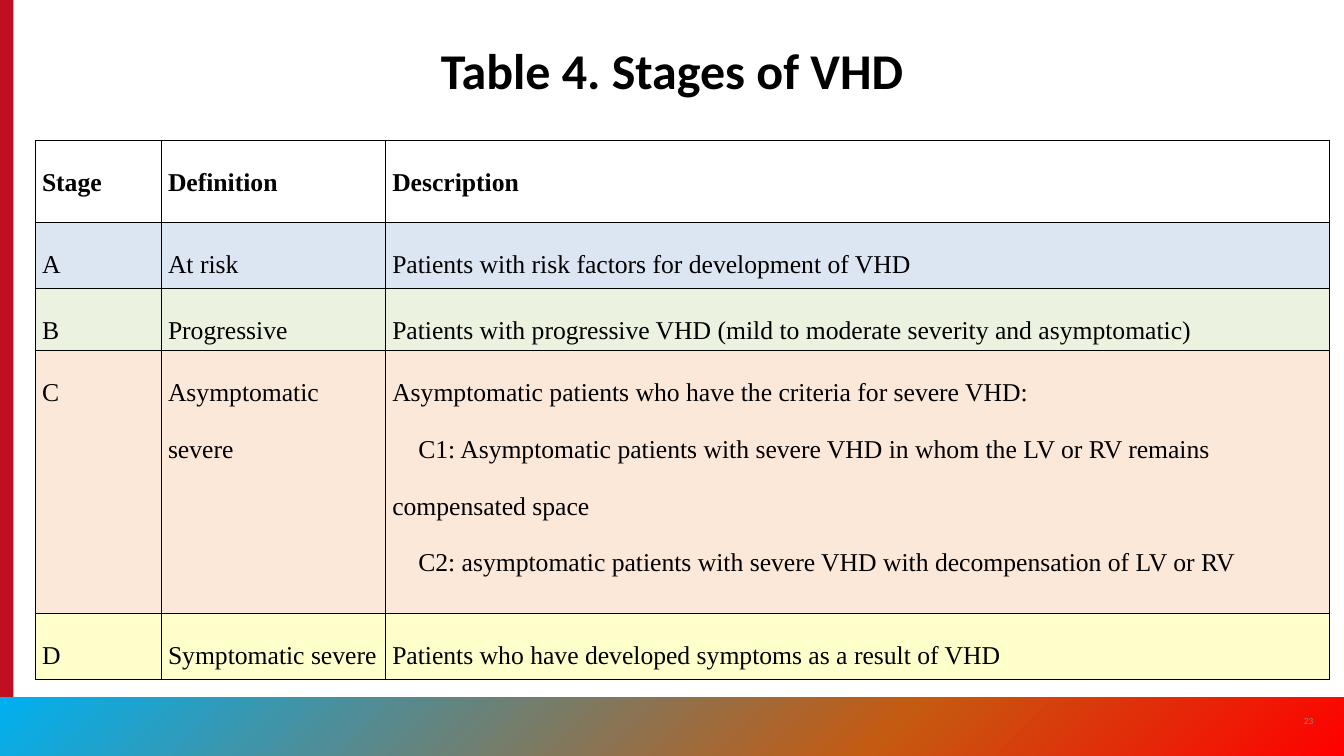
from copy import deepcopy

from lxml import etree
from pptx import Presentation
from pptx import util as u
from pptx.dml.color import RGBColor
from pptx.enum import shapes, text
from pptx.oxml.ns import qn

COLORS = {
    "black": "000000",
    "white": "FFFFFF",
    "stripe": "C10E21",
    "number": "8A8B8A",
    "at_risk": "DCE6F2",
    "progressive": "EBF2DF",
    "asymptomatic": "FCE8D9",
    "symptomatic": "FFFFCC",
}
FOOTER_STOPS = [(0, "00B0F0"), (0.66, "C55A11"), (1, "FF0000")]
COLUMN_WIDTHS = [1.5, 2.67, 11.24]
STAGES = [
    (0.98, "white", ["Stage"], ["Definition"], ["Description"]),
    (0.78, "at_risk", ["A"], ["At risk"],
     ["Patients with risk factors for development of VHD"]),
    (0.74, "progressive", ["B"], ["Progressive"],
     ["Patients with progressive VHD (mild to moderate severity and asymptomatic)"]),
    (3.13, "asymptomatic", ["C"], ["Asymptomatic severe"],
     ["Asymptomatic patients who have the criteria for severe VHD:",
      "C1: Asymptomatic patients with severe VHD in whom the LV or RV remains compensated space",
      "C2: asymptomatic patients with severe VHD with decompensation of LV or RV"]),
    (0.79, "symptomatic", ["D"], ["Symptomatic severe"],
     ["Patients who have developed symptoms as a result of VHD"]),
]


def rgb(name):
    return RGBColor.from_string(COLORS[name])


def add_span(para, words, font, size, color, bold=False):
    span = para.add_run()
    span.text = words
    span.font.name = font
    span.font.size = u.Pt(size)
    span.font.bold = bold
    span.font.color.rgb = rgb(color)


def add_bar(page, box):
    bar = page.shapes.add_shape(shapes.MSO_SHAPE.RECTANGLE, *map(u.Inches, box))
    bar.shadow.inherit = False
    bar.line.fill.background()
    return bar


def add_stripe(page, box):
    stripe = add_bar(page, box)
    stripe.fill.solid()
    stripe.fill.fore_color.rgb = rgb("stripe")


def add_footer(page, box):
    fill = add_bar(page, box).fill
    fill.gradient()
    fill.gradient_angle = 315
    stops = fill._fill._gradFill.find(qn("a:gsLst"))
    stops.append(deepcopy(stops[0]))
    for stop, (position, color) in zip(fill.gradient_stops, FOOTER_STOPS):
        stop.color.rgb = RGBColor.from_string(color)
        stop.position = position
    left, top, width, height = box
    add_label(page, (left + width - 0.66, top + 0.04, 0.48, 0.48),
              "23", 8, "number", text.MSO_ANCHOR.MIDDLE)


def add_label(page, box, words, size, color, anchor, bold=False, spacing=1.0):
    frame = page.shapes.add_textbox(*map(u.Inches, box)).text_frame
    frame.word_wrap = True
    frame.vertical_anchor = anchor
    para = frame.paragraphs[0]
    para.alignment = text.PP_ALIGN.CENTER
    para.line_spacing = spacing
    add_span(para, words, "Calibri", size, color, bold)


def add_borders(cell):
    properties = cell._tc.get_or_add_tcPr()
    for place, side in enumerate(("a:lnL", "a:lnR", "a:lnT", "a:lnB")):
        line = etree.Element(qn(side), w=str(u.Pt(1)))
        fill = etree.SubElement(line, qn("a:solidFill"))
        etree.SubElement(fill, qn("a:srgbClr"), val=COLORS["black"])
        properties.insert(place, line)


def fill_cell(cell, lines, color, bold):
    cell.margin_left = cell.margin_right = u.Inches(0.08)
    cell.margin_top = cell.margin_bottom = 0
    cell.fill.solid()
    cell.fill.fore_color.rgb = rgb(color)
    add_borders(cell)
    for index, words in enumerate(lines):
        para = cell.text_frame.paragraphs[0] if index == 0 else cell.text_frame.add_paragraph()
        para.line_spacing = 2.0
        if index:
            para._p.get_or_add_pPr().set("indent", str(u.Inches(0.31)))
        add_span(para, words, "Times New Roman", 22, "black", bold)


def add_stage_table(page, box):
    table = page.shapes.add_table(len(STAGES), len(COLUMN_WIDTHS), *map(u.Inches, box)).table
    for column, width in zip(table.columns, COLUMN_WIDTHS):
        column.width = u.Inches(width)
    for index, (height, color, *entries) in enumerate(STAGES):
        table.rows[index].height = u.Inches(height)
        for cell, lines in zip(table.rows[index].cells, entries):
            fill_cell(cell, lines, color, bold=index == 0)


def build_stages_page(deck):
    page = deck.slides.add_slide(deck.slide_layouts[6])
    add_stripe(page, (0, 0, 0.16, 9))
    add_footer(page, (0, 8.3, 16, 0.7))
    add_label(page, (2.21, 0.25, 11.58, 0.99), "Table 4. Stages of VHD", 42.9, "black",
              text.MSO_ANCHOR.BOTTOM, bold=True, spacing=0.9)
    add_stage_table(page, (0.42, 1.67, 15.41, 6.42))


def main():
    deck = Presentation()
    deck.slide_width = u.Inches(16)
    deck.slide_height = u.Inches(9)
    build_stages_page(deck)
    deck.save("out.pptx")


if __name__ == "__main__":
    main()
